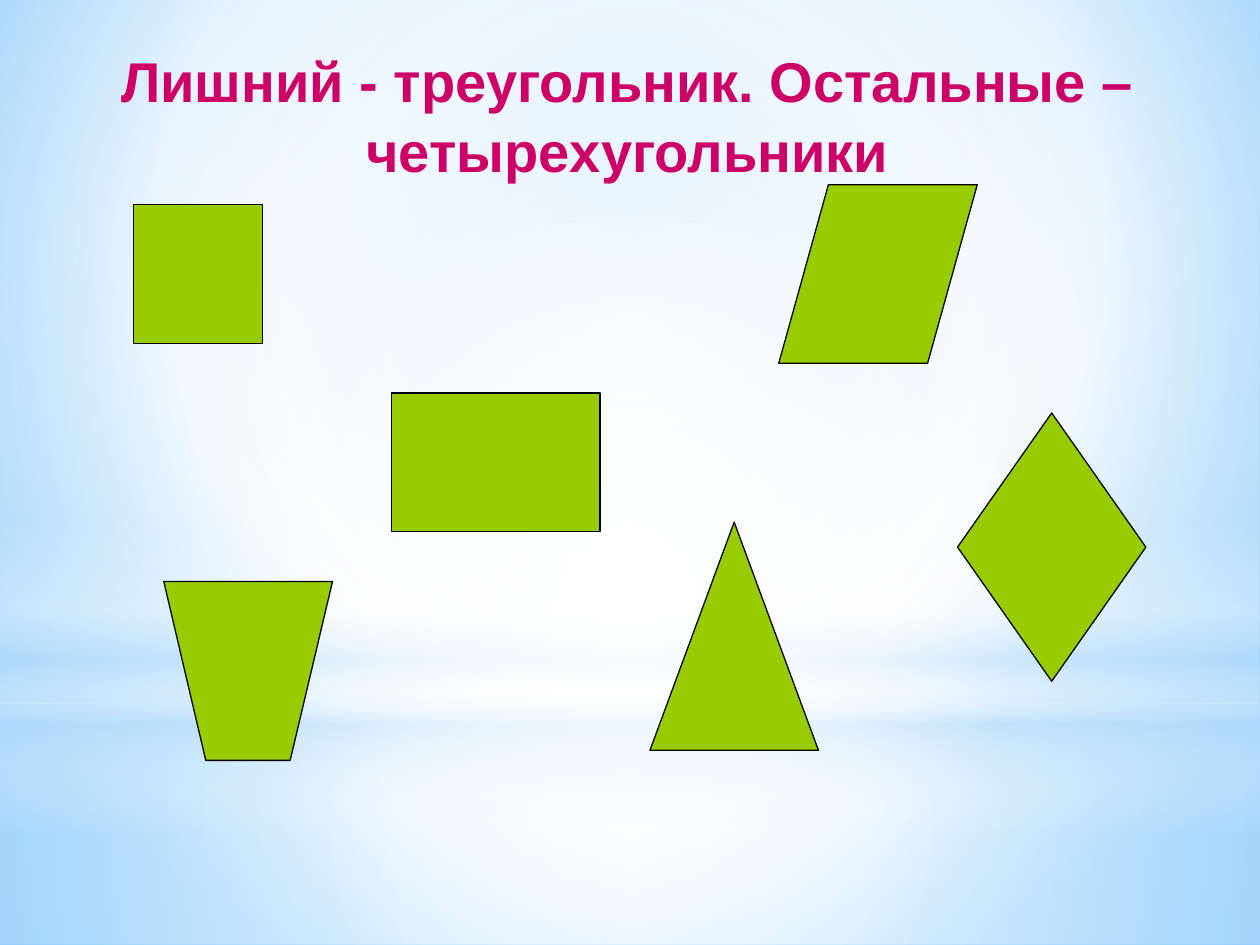
"""Build a slide that sets a triangle against a group of quadrilaterals."""
from lxml.etree import SubElement
from pptx import Presentation
from pptx.dml.color import RGBColor
from pptx.enum.shapes import MSO_SHAPE as Shape
from pptx.enum.text import MSO_ANCHOR as Anchor, PP_ALIGN as Align
from pptx.oxml.ns import qn
from pptx.util import Pt

MAGENTA = RGBColor(0xCC, 0x00, 0x66)
LIME = RGBColor(0x99, 0xCC, 0x00)
BLACK = RGBColor(0x00, 0x00, 0x00)
WHITE = RGBColor(0xFF, 0xFF, 0xFF)
PALE_BLUE = RGBColor(0xB4, 0xDC, 0xFA)
SKY_BLUE = RGBColor(0x9E, 0xD5, 0xFF)
DEEP_BLUE = RGBColor(0x5B, 0xB9, 0xFF)


def write_text(frame, text, font="Arial", size=32, color=BLACK, bold=False,
               align=Align.CENTER, spacing=1.0):
    frame.text = text
    frame.word_wrap = True
    frame.vertical_anchor = Anchor.TOP
    paragraph = frame.paragraphs[0]
    paragraph.alignment = align
    paragraph.line_spacing = spacing
    style = paragraph.runs[0].font
    style.name, style.size, style.bold = font, Pt(size), bold
    style.color.rgb = color


def apply_gradient(owner, fill, stops, focus=None):
    fill.gradient()
    gradient = owner._element.xpath(".//a:gradFill")[0]
    gradient.clear()
    stop_list = SubElement(gradient, qn("a:gsLst"))
    for position, color, opacity in stops:
        stop = SubElement(stop_list, qn("a:gs"), pos=str(position * 1000))
        tint = SubElement(stop, qn("a:srgbClr"), val=str(color))
        if opacity < 100:
            SubElement(tint, qn("a:alpha"), val=str(opacity * 1000))
    if focus:
        radial = SubElement(gradient, qn("a:path"))
        radial.set("path", "circle")
        edges = {side: str(inset * 1000) for side, inset in zip("ltrb", focus)}
        SubElement(radial, qn("a:fillToRect"), **edges)
    else:
        SubElement(gradient, qn("a:lin"), ang="5400000", scaled="0")


deck = Presentation()
deck.slide_width, deck.slide_height = Pt(720), Pt(540)
slide = deck.slides.add_slide(deck.slide_layouts[5])
shapes = slide.shapes

apply_gradient(slide, slide.background.fill,
               [(0, SKY_BLUE, 100), (60, WHITE, 100), (100, DEEP_BLUE, 100)],
               (20, 10, 20, 60))

CENTER = (50, 50, 50, 50)
glows = [
    (Shape.RECTANGLE, 401.76, 138.24, CENTER,
     [(0, WHITE, 91), (37, WHITE, 76), (100, PALE_BLUE, 79)]),
    (Shape.RECTANGLE, 0, 401.76, CENTER,
     [(0, WHITE, 89), (48, WHITE, 62), (100, PALE_BLUE, 79)]),
    (Shape.RECTANGLE, 296.64, 180, None,
     [(0, WHITE, 0), (29, WHITE, 30), (45, PALE_BLUE, 40),
      (55, WHITE, 26), (65, PALE_BLUE, 60), (100, WHITE, 0)]),
    (Shape.OVAL, 126, 401.76, CENTER, [(0, WHITE, 100), (56, WHITE, 0)]),
]
for kind, top, height, focus, stops in glows:
    glow = shapes.add_shape(kind, 0, Pt(top), deck.slide_width, Pt(height))
    glow.shadow.inherit = False
    glow.line.fill.background()
    apply_gradient(glow, glow.fill, stops, focus)

title = shapes.title
title.left, title.top, title.width, title.height = Pt(8.64), Pt(20.9), Pt(700), Pt(85)
write_text(title.text_frame, "Лишний - треугольник. Остальные – четырехугольники",
           color=MAGENTA, bold=True, spacing=1.05)
glow._element.addnext(title._element)

square, rectangle, parallelogram, triangle, rhombus = [
    shapes.add_shape(kind, Pt(left), Pt(top), Pt(width), Pt(height))
    for kind, left, top, width, height in [
        (Shape.RECTANGLE, 76.5, 117, 73.7, 79.4),
        (Shape.RECTANGLE, 223.9, 224.5, 119, 79.4),
        (Shape.PARALLELOGRAM, 445, 105.6, 113.4, 102),
        (Shape.ISOSCELES_TRIANGLE, 371.4, 298.4, 96.3, 130.4),
        (Shape.DIAMOND, 547.2, 236, 107.6, 153.3),
    ]
]
parallelogram.adjustments[0] = 0.278

outline = shapes.build_freeform(Pt(93.6), Pt(332.3))
outline.add_line_segments(
    [(Pt(117.6), Pt(434.5)), (Pt(165.8), Pt(434.5)), (Pt(190), Pt(332.3))])
trapezoid = outline.convert_to_shape()

for figure in (square, rectangle, trapezoid, parallelogram, triangle, rhombus):
    figure.shadow.inherit = False
    figure.fill.solid()
    figure.fill.fore_color.rgb = LIME
    figure.line.color.rgb = BLACK
    figure.line.width = Pt(0.75)

deck.save("out.pptx")
